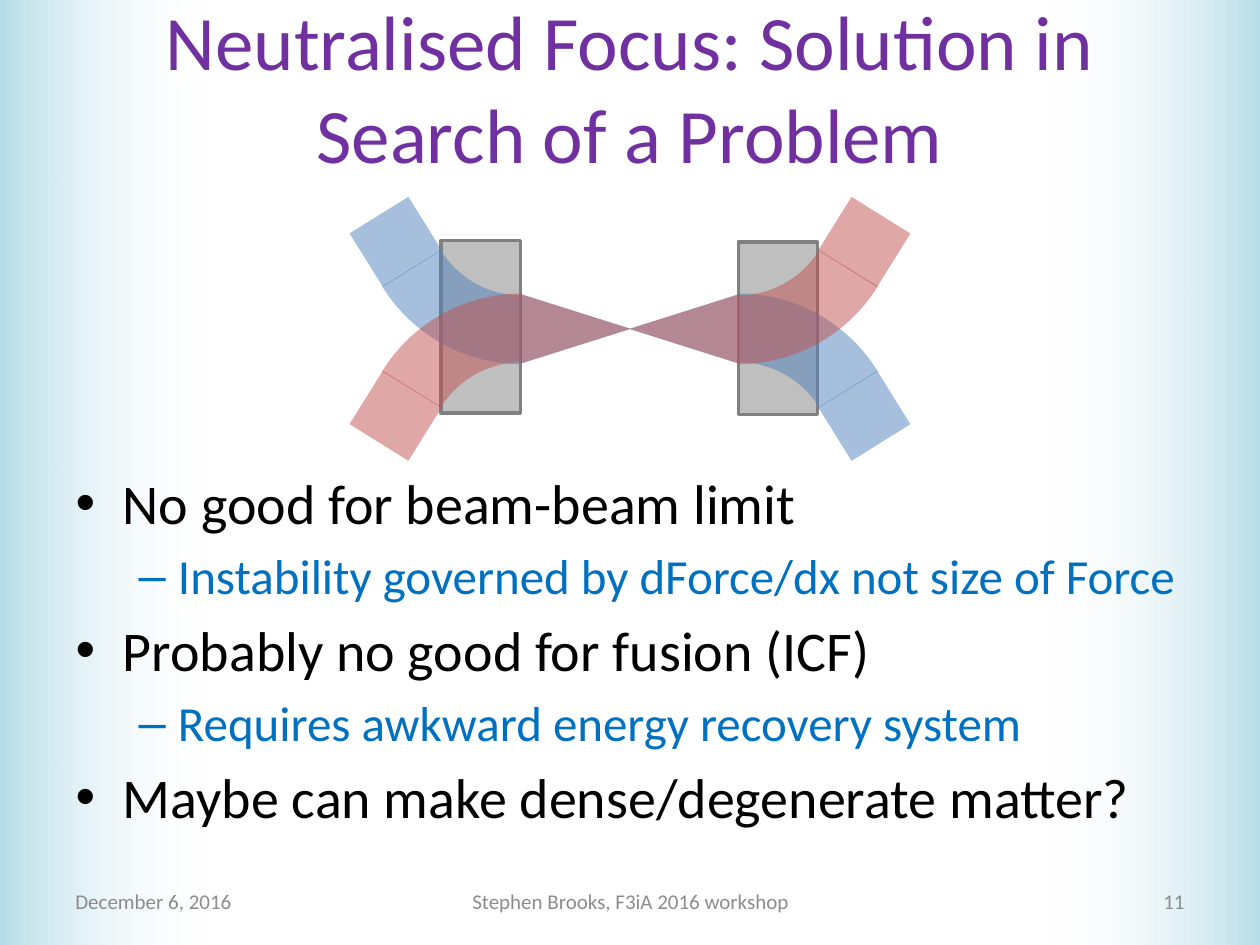
from lxml import etree
from pptx import Presentation, util as u
from pptx.dml.color import RGBColor
from pptx.enum import shapes, text
from pptx.oxml.ns import qn

PURPLE = RGBColor(0x70, 0x30, 0xA0)
BLACK = RGBColor(0, 0, 0)
AZURE = RGBColor(0x00, 0x70, 0xC0)
GREY = RGBColor(0x8C, 0x8C, 0x8C)
MIST = RGBColor(0xB7, 0xDE, 0xE8)
WHITE = RGBColor(0xFF, 0xFF, 0xFF)
SILVER = RGBColor(0xBF, 0xBF, 0xBF)
STEEL = RGBColor(0x80, 0x80, 0x80)
BLUE = RGBColor(0x4F, 0x81, 0xBD)
RED = RGBColor(0xC0, 0x50, 0x4D)

FONT = "Calibri"
COLS, ROWS = 10, 7.5
KIND = shapes.MSO_SHAPE
ALIGN = text.PP_ALIGN
MIDDLE = text.MSO_ANCHOR.MIDDLE


def write(para, words, size=12, color=GREY, align=None):
    para.alignment = align
    run = para.add_run()
    run.text = words
    run.font.name = FONT
    run.font.size = u.Pt(size)
    run.font.color.rgb = color


def fade(color, share):
    """Give a colour element an opacity, in percent."""
    etree.SubElement(color, qn("a:alpha")).set("val", str(share * 1000))


class Deck:
    """Style and current slide; lengths are in grid columns and rows."""

    def __init__(self):
        self.prs = Presentation()
        self.prs.slide_width = u.Inches(10)
        self.prs.slide_height = u.Inches(7.5)
        self.col = self.prs.slide_width / COLS
        self.row = self.prs.slide_height / ROWS
        self.slide = self.prs.slides.add_slide(self.prs.slide_layouts[1])

    def box(self, x, y, w, h):
        return (round(x * self.col), round(y * self.row),
                round(w * self.col), round(h * self.row))

    def shape(self, kind, box, color=None, turn=0, home=None):
        shape = (home or self.slide).shapes.add_shape(kind, *self.box(*box))
        shape.shadow.inherit = False
        shape.rotation = turn % 360
        shape.line.fill.background()
        if color is not None:
            shape.fill.solid()
            shape.fill.fore_color.rgb = color
        return shape

    def edge(self, x, turn):
        """Side band that fades towards the middle, behind everything."""
        band = self.shape(KIND.RECTANGLE, (x, 0, 1.69, ROWS), turn=turn)
        band.fill.gradient()
        band.fill.gradient_angle = 0
        for stop, color, place in zip(band.fill.gradient_stops, (MIST, WHITE), (0, 1)):
            stop.color.rgb = color
            stop.position = place
        fade(list(band._element.iter(qn("a:srgbClr")))[-1], 0)
        self.slide.shapes._spTree.insert(2, band._element)

    def holder(self, item, box):
        item.left, item.top, item.width, item.height = self.box(*box)
        item.text_frame.auto_size = text.MSO_AUTO_SIZE.NONE
        return item.text_frame

    def title(self, words, box):
        frame = self.holder(self.slide.shapes.title, box)
        frame.vertical_anchor = MIDDLE
        write(frame.paragraphs[0], words, 44, PURPLE, ALIGN.CENTER)

    def points(self, items, box):
        frame = self.holder(self.slide.placeholders[1], box)
        looks = ((32, BLACK), (28, AZURE))
        for i, (level, words) in enumerate(items):
            para = frame.add_paragraph() if i else frame.paragraphs[0]
            para.level = level
            write(para, words, *looks[level])

    def label(self, words, box, align):
        frame = self.slide.shapes.add_textbox(*self.box(*box)).text_frame
        frame.word_wrap = True
        frame.vertical_anchor = MIDDLE
        write(frame.paragraphs[0], words, align=align)

    def magnet(self, home, x, y):
        block = self.shape(KIND.RECTANGLE, (x, y, 0.63, 1.37), SILVER, home=home)
        block.line.color.rgb = STEEL
        block.line.width = u.Pt(2)

    def beam(self, home, side, rise, color):
        """Cone, bend and tail on one side (-1 left) and height (-1 up)."""
        midx, midy = 5, 2.61
        flip = side != rise
        base = 0 if side < 0 else 180
        parts = (
            (KIND.ISOSCELES_TRIANGLE, 0.43, 0, 0.55, 0.87, 90),
            (KIND.BLOCK_ARC, 0.86, 1.02, 2.6, 2.6, 270),
            (KIND.RECTANGLE, 1.86, 0.69, 0.5, 0.55, 58.1),
        )
        for kind, dx, dy, w, h, angle in parts:
            x, y = midx + side * dx - w / 2, midy + rise * dy - h / 2
            turn = base + angle
            part = self.shape(kind, (x, y, w, h), color, -turn if flip else turn, home)
            fade(next(part._element.iter(qn("a:srgbClr"))), 50)
            if flip:
                part._element.spPr.find(qn("a:xfrm")).set("flipV", "1")
            if kind == KIND.BLOCK_ARC:
                for i, value in enumerate((108, 143.01, 0.21)):
                    part.adjustments[i] = value


def main():
    deck = Deck()
    deck.edge(0, 0)
    deck.edge(8.31, 180)
    deck.title("Neutralised Focus: Solution in Search of a Problem", (0.5, 0.06, 9, 1.25))
    deck.points((
        (0, "No good for beam-beam limit"),
        (1, "Instability governed by dForce/dx not size of Force"),
        (0, "Probably no good for fusion (ICF)"),
        (1, "Requires awkward energy recovery system"),
        (0, "Maybe can make dense/degenerate matter?"),
    ), (0.5, 3.67, 9, 3.03))
    for words, x, w, align in (
        ("December 6, 2016", 0.5, 2.33, ALIGN.LEFT),
        ("Stephen Brooks, F3iA 2016 workshop", 3.42, 3.17, ALIGN.CENTER),
        ("11", 7.17, 2.33, ALIGN.RIGHT),
    ):
        deck.label(words, (x, 6.95, w, 0.4), align)

    optics = deck.slide.shapes.add_group_shape()
    deck.magnet(optics, 5.86, 1.92)
    deck.magnet(optics, 3.5, 1.91)
    for side in (-1, 1):
        deck.beam(optics, side, side, BLUE)
        deck.beam(optics, side, -side, RED)
    deck.prs.save("out.pptx")


if __name__ == "__main__":
    main()
